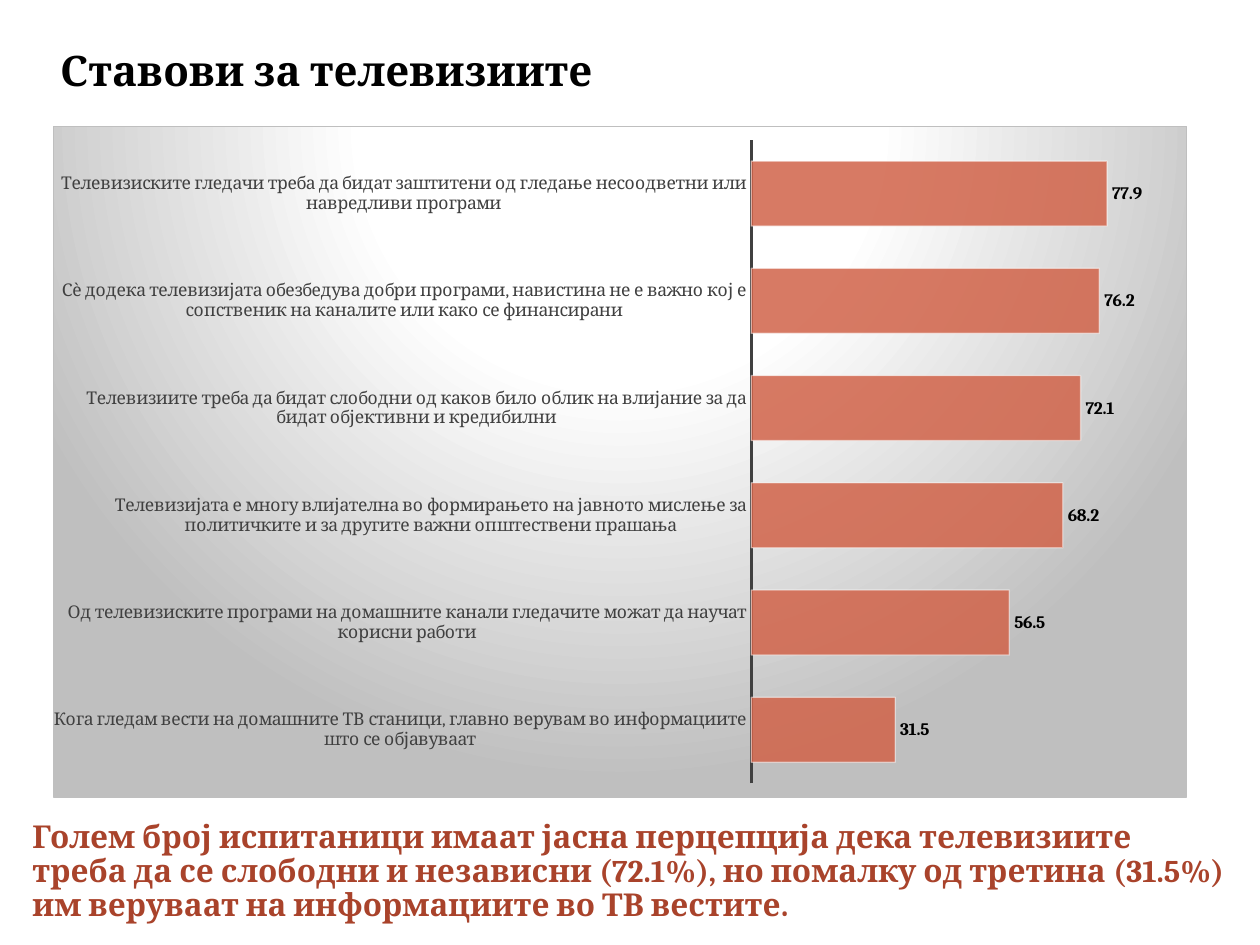
from dataclasses import dataclass

from lxml.etree import SubElement
from pptx import Presentation
from pptx.chart.data import CategoryChartData
from pptx.dml.color import RGBColor
from pptx.enum.chart import XL_CHART_TYPE, XL_LABEL_POSITION, XL_TICK_LABEL_POSITION, XL_TICK_MARK
from pptx.enum.text import MSO_ANCHOR
from pptx.oxml import parse_xml
from pptx.oxml.ns import nsdecls, qn
from pptx.util import Inches, Pt

ATTITUDES = {
    "Кога гледам вести на домашните ТВ станици, главно верувам во информациите што се објавуваат": 31.5,
    "Од телевизиските програми на домашните канали гледачите можат да научат корисни работи": 56.5,
    "Телевизијата е многу влијателна во формирањето на јавното мислење за политичките "
    "и за другите важни општествени прашања": 68.2,
    "Телевизиите треба да бидат слободни од каков било облик на влијание за да бидат "
    "објективни и кредибилни": 72.1,
    "Сѐ додека телевизијата обезбедува добри програми, навистина не е важно кој е "
    "сопственик на каналите или како се финансирани": 76.2,
    "Телевизиските гледачи треба да бидат заштитени од гледање несоодветни или навредливи програми": 77.9,
}
CONCLUSION = (
    "Голем број испитаници имаат јасна перцепција дека телевизиите треба да се слободни и независни "
    "(72.1%), но помалку од третина (31.5%) им веруваат на информациите во ТВ вестите."
)


@dataclass(frozen=True)
class Theme:
    """Colours, typeface and type sizes of the slide."""
    font: str = "Cambria"
    ink: str = "000000"
    label: str = "404040"
    accent: str = "A9432B"
    bar: str = "D16349"
    light: str = "FFFFFF"
    shade: str = "BFBFBF"
    title_size: int = 24
    conclusion_size: int = 18
    chart_size: int = 10


def apply(target, **values):
    """Set each named value as an attribute of the target."""
    for name, value in values.items():
        setattr(target, name, value)


def set_alpha(element, query, percent):
    """Make the colours found by the query partly transparent."""
    for colour in element.xpath(query):
        SubElement(colour, qn("a:alpha")).set("val", str(percent * 1000))


class SlideBuilder:
    """Places styled elements on a slide by shares of its size."""

    def __init__(self, deck, theme):
        """Add a blank slide to the deck."""
        self.deck, self.theme = deck, theme
        self.slide = deck.slides.add_slide(deck.slide_layouts[6])

    def area(self, left, top, width, height):
        """Turn shares of the slide into lengths."""
        across, down = self.deck.slide_width, self.deck.slide_height
        return [round(share * side) for share, side in
                zip((left, top, width, height), (across, down, across, down))]

    def style(self, font, size, colour, bold=False):
        """Give a font the theme's typeface with a size, colour and weight."""
        apply(font, name=self.theme.font, size=Pt(size), bold=bold)
        font.color.rgb = RGBColor.from_string(colour)

    def text(self, place, wording, size, colour):
        """Add a bold, vertically centred paragraph."""
        frame = self.slide.shapes.add_textbox(*self.area(*place)).text_frame
        apply(frame, word_wrap=True, vertical_anchor=MSO_ANCHOR.MIDDLE)
        paragraph = frame.paragraphs[0]
        apply(paragraph, text=wording, line_spacing=0.9)
        self.style(paragraph.runs[0].font, size, colour, bold=True)

    def bars(self, place, values):
        """Add a horizontal bar chart with value labels."""
        theme = self.theme
        data = CategoryChartData(number_format="0.0")
        data.categories = list(values)
        data.add_series("Series 1", list(values.values()))
        chart = self.slide.shapes.add_chart(
            XL_CHART_TYPE.BAR_CLUSTERED, *self.area(*place), data).chart
        apply(chart, has_title=False, has_legend=False)
        self.style(chart.font, theme.chart_size, theme.ink)
        apply(chart.value_axis, has_major_gridlines=False, visible=False,
              minimum_scale=0, maximum_scale=90)
        axis = chart.category_axis
        apply(axis, major_tick_mark=XL_TICK_MARK.NONE, minor_tick_mark=XL_TICK_MARK.NONE,
              tick_label_position=XL_TICK_LABEL_POSITION.NEXT_TO_AXIS)
        self.style(axis.tick_labels.font, theme.chart_size, theme.label)
        self.outline(axis.format.line, theme.label, 1.5)
        self.bar_series(chart.plots[0])
        self.chart_background(chart)
        self.plot_position(chart, x=0.616, y=0.02, w=0.363, h=0.96)

    def outline(self, line, colour, width):
        """Colour a line and set its width."""
        line.color.rgb = RGBColor.from_string(colour)
        line.width = Pt(width)

    def bar_series(self, plot):
        """Style the bars and their labels."""
        theme = self.theme
        apply(plot, gap_width=65, vary_by_categories=False, has_data_labels=True)
        apply(plot.data_labels, show_value=True, position=XL_LABEL_POSITION.OUTSIDE_END,
              number_format="0.0", number_format_is_linked=False)
        self.style(plot.data_labels.font, theme.chart_size, theme.ink, bold=True)
        series = plot.series[0]
        series.format.fill.solid()
        series.format.fill.fore_color.rgb = RGBColor.from_string(theme.bar)
        self.outline(series.format.line, theme.light, 0.75)
        set_alpha(series._element, "c:spPr/a:solidFill/a:srgbClr", 85)
        set_alpha(series._element, "c:spPr/a:ln/a:solidFill/a:srgbClr", 50)

    def chart_background(self, chart):
        """Fill the chart with a circular gradient and a thin border."""
        theme = self.theme
        stops = "".join(
            f'<a:gs pos="{percent * 1000}"><a:srgbClr val="{colour}"/></a:gs>'
            for percent, colour in ((0, theme.light), (39, theme.light), (100, theme.shade)))
        background = parse_xml(
            f'<c:spPr {nsdecls("c", "a")}><a:gradFill><a:gsLst>{stops}</a:gsLst>'
            '<a:path path="circle"><a:fillToRect l="50000" t="-80000" r="50000" b="180000"/></a:path>'
            f'</a:gradFill><a:ln w="{Pt(0.75)}"><a:solidFill><a:srgbClr val="{theme.shade}"/>'
            '</a:solidFill></a:ln></c:spPr>')
        chart._chartSpace.find(qn("c:txPr")).addprevious(background)

    def plot_position(self, chart, **shares):
        """Fix the inner plot area by shares of the chart."""
        plot_area = chart._chartSpace.chart.plotArea
        for automatic in plot_area.findall(qn("c:layout")):
            plot_area.remove(automatic)
        modes = "".join(f'<c:{side}Mode val="edge"/>' for side in "xy")
        sizes = "".join(f'<c:{side} val="{share}"/>' for side, share in shares.items())
        plot_area.insert(0, parse_xml(
            f'<c:layout {nsdecls("c")}><c:manualLayout><c:layoutTarget val="inner"/>'
            f'{modes}{sizes}</c:manualLayout></c:layout>'))


def main():
    """Build and save the slide."""
    deck = Presentation()
    apply(deck, slide_width=Inches(10), slide_height=Inches(7.5))
    theme = Theme()
    page = SlideBuilder(deck, theme)
    page.text((0.038, 0.08 / 7.5, 0.954, 1 / 7.5), "Ставови за телевизиите", theme.title_size, theme.ink)
    page.text((0.016, 6.42 / 7.5, 0.967, 1 / 7.5), CONCLUSION, theme.conclusion_size, theme.accent)
    page.bars((0.042, 1 / 7.5, 0.9, 5.33 / 7.5), ATTITUDES)
    deck.save("out.pptx")


if __name__ == "__main__":
    main()
